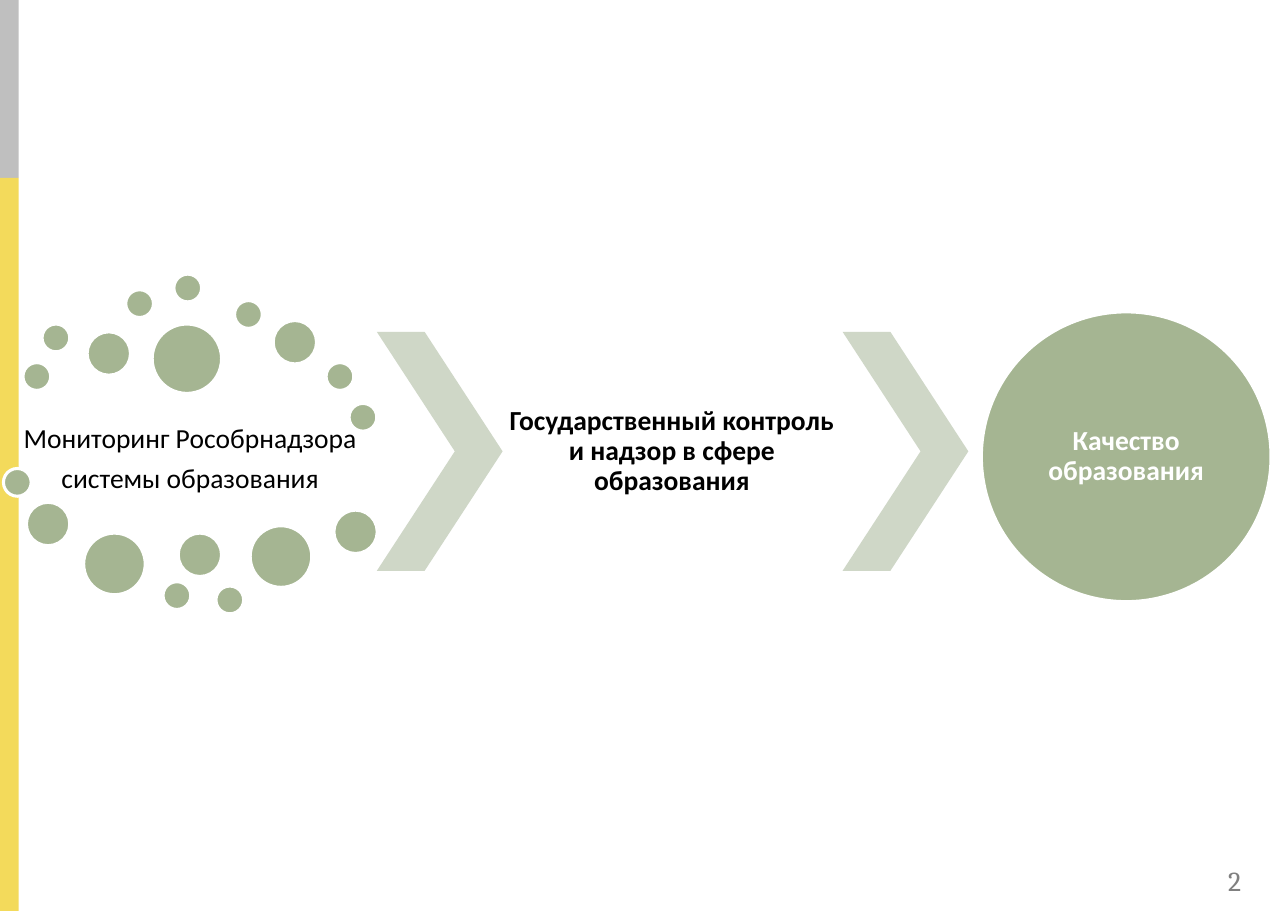
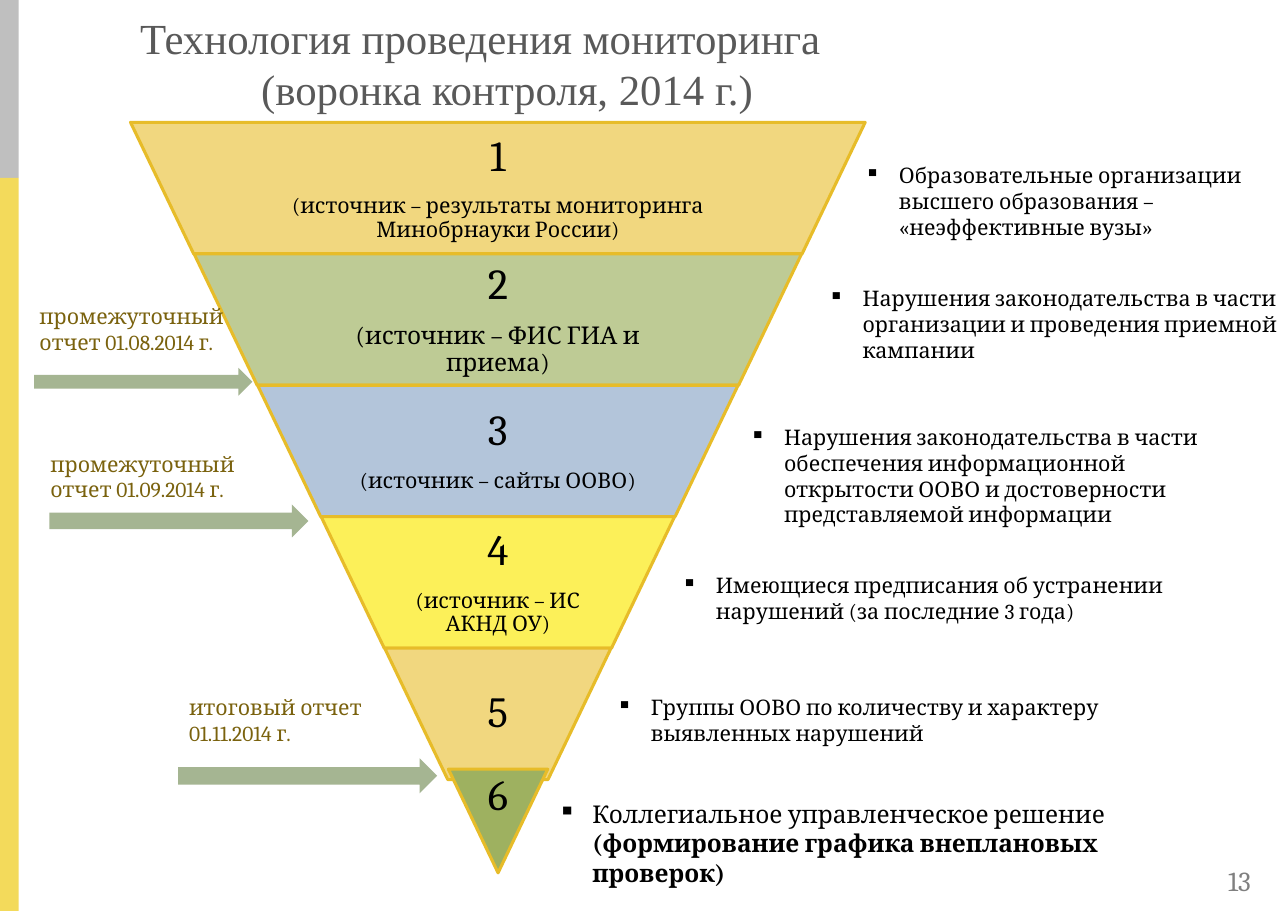
from dataclasses import dataclass

from lxml import etree
from pptx import Presentation
from pptx.dml.color import RGBColor
from pptx.enum import shapes, text
from pptx.oxml import ns
from pptx.util import Cm, Pt

KIND = shapes.MSO_SHAPE
LEFT, CENTER = text.PP_ALIGN.LEFT, text.PP_ALIGN.CENTER
TOP, MIDDLE = text.MSO_ANCHOR.TOP, text.MSO_ANCHOR.MIDDLE


@dataclass(frozen=True)
class Theme:
    white: str = "FFFFFF"
    black: str = "000000"
    gray: str = "BFBFBF"
    yellow: str = "F3DA5B"
    green: str = "A5B592"
    chevron: str = "CFD7C7"
    edge: str = "E7BC29"
    title: str = "595959"
    number: str = "808080"
    report: str = "7A620E"
    levels: tuple = ("F1D77F", "BECB95", "B3C5DA", "FCF059", "F1D77F")
    tip: str = "9EB160"
    body_font: str = "Cambria"
    diagram_font: str = "Calibri"
    title_font: str = "Times New Roman"
    large: int = 28
    medium: int = 18
    normal: int = 16
    small: int = 14


THEME = Theme()


class Builder:
    """Holds the deck, its theme and the page being drawn."""

    def __init__(self, theme):
        self.theme = theme
        self.deck = Presentation()
        self.deck.slide_width, self.deck.slide_height = Cm(29.7), Cm(21)
        self.page = None

    def start_page(self, number, title=None):
        """Add a page with side bands, a page number and perhaps a title."""
        theme = self.theme
        layout = self.deck.slide_layouts[5 if title else 6]
        self.page = self.deck.slides.add_slide(layout)
        self.shape(KIND.RECTANGLE, (0, 0, 0.43, 4.1), theme.gray)
        self.shape(KIND.RECTANGLE, (0, 4.1, 0.43, 16.9), theme.yellow)
        self.label((28.07, 19.79, 1.47, 1.02), [[(str(number), {})]],
                   size=theme.medium, color=theme.number)
        if title:
            box = self.page.shapes.title
            place = zip(("left", "top", "width", "height"), (2.95, 0.58, 17.48, 1.75))
            for name, value in place:
                setattr(box, name, Cm(value))
            self.set_text(box.text_frame, [[(line, {})] for line in title],
                          font=theme.title_font, size=theme.large, color=theme.title,
                          anchor=MIDDLE, insets=(0.28, 0.15, 0.28, 0.15))
            box.text_frame.paragraphs[1].alignment = CENTER

    def shape(self, kind, place, fill, line=None, adjust=None, turn=0):
        shape = self.page.shapes.add_shape(kind, *map(Cm, place))
        shape.shadow.inherit = False
        shape.rotation = turn
        shape.fill.solid()
        shape.fill.fore_color.rgb = RGBColor.from_string(fill)
        if line:
            shape.line.color.rgb = RGBColor.from_string(line)
            shape.line.width = Pt(2)
        else:
            shape.line.fill.background()
        if adjust is not None:
            shape.adjustments[0] = adjust
        return shape

    def label(self, place, paragraphs, **style):
        box = self.page.shapes.add_textbox(*map(Cm, place))
        self.set_text(box.text_frame, paragraphs, **style)

    def diagram_label(self, place, paragraphs, inset=0.1, **style):
        self.label(place, paragraphs, align=CENTER, spaced=True,
                   insets=(inset,) * 4, **{"anchor": MIDDLE, **style})

    def set_text(self, frame, paragraphs, font=None, size=18, color=None, bold=False,
                 align=LEFT, anchor=TOP, insets=(0.25, 0.13, 0.25, 0.13),
                 spaced=False, bullet=None):
        """Fill a frame; each paragraph is a list of (text, font values)."""
        sides = ("margin_left", "margin_top", "margin_right", "margin_bottom")
        values = {"word_wrap": True, "auto_size": text.MSO_AUTO_SIZE.NONE,
                  "vertical_anchor": anchor, **dict(zip(sides, map(Cm, insets)))}
        for name, value in values.items():
            setattr(frame, name, value)
        for index, spans in enumerate(paragraphs):
            para = frame.add_paragraph() if index else frame.paragraphs[0]
            para.alignment = align
            if bullet:
                self.add_bullet(para, bullet)
            for words, changes in spans:
                span = para.add_run()
                span.text = words
                look = {"name": font or self.theme.body_font, "size": size,
                        "bold": bold, **changes}
                points = look["size"]
                look["size"] = Pt(points)
                for name, value in look.items():
                    setattr(span.font, name, value)
                span.font.color.rgb = RGBColor.from_string(color or self.theme.black)
            if spaced:
                para.line_spacing = 0.9
                para.space_after = Pt(0.35 * points)

    @staticmethod
    def add_bullet(para, mark):
        properties = para._p.get_or_add_pPr()
        properties.set("marL", str(Cm(0.79)))
        properties.set("indent", str(Cm(-0.79)))
        etree.SubElement(properties, ns.qn("a:buChar")).set("char", mark)


def build_process(build):
    theme = build.theme
    build.start_page(2)
    build.diagram_label((0.46, 9.3, 7.85, 2.59),
                        [[("Мониторинг Рособрнадзора", {})],
                         [("системы образования", {})]],
                        inset=0.08, font=theme.diagram_font, size=theme.medium)
    dots = {
        0.64: ((0.53, 8.36), (0.97, 7.47), (2.9, 6.68), (4.01, 6.32), (5.41, 6.93),
               (7.52, 8.36), (8.05, 9.3), (0.08, 10.8), (3.76, 13.41), (4.98, 13.51)),
        1: ((2.01, 7.65), (6.3, 7.39), (0.61, 11.58), (4.11, 12.29), (7.7, 11.76)),
        1.42: ((1.93, 12.29), (5.77, 12.12)),
        1.6: ((3.51, 7.47),),
    }
    for diameter, corners in dots.items():
        for left, top in corners:
            build.shape(KIND.OVAL, (left, top, diameter, diameter),
                        theme.green, theme.white)
    for left in (8.69, 19.43):
        build.shape(KIND.CHEVRON, (left, 7.65, 2.9, 5.51), theme.chevron, adjust=0.62)
    build.diagram_label((11.56, 7.65, 7.87, 5.51),
                        [[("Государственный контроль и надзор в сфере образования", {})]],
                        inset=0.08, font=theme.diagram_font, size=theme.medium, bold=True)
    goal = build.shape(KIND.OVAL, (22.63, 7.19, 6.68, 6.68), theme.green, theme.white)
    build.set_text(goal.text_frame, [[("Качество образования", {})]],
                   font=theme.diagram_font, size=theme.medium, color=theme.white,
                   bold=True, align=CENTER, anchor=MIDDLE, insets=(0,) * 4, spaced=True)


def build_funnel(build):
    theme = build.theme
    build.start_page(13, ("Технология проведения мониторинга",
                          "(воронка контроля, 2014 г.)"))
    sources = (
        ("(источник – результаты мониторинга Минобрнауки России)", theme.small),
        ("(источник – ФИС ГИА и приема)", theme.normal),
        ("(источник – сайты ООВО)", theme.small),
        ("(источник – ИС АКНД ОУ)", theme.small),
        None,
    )
    middle, height = 11.48, 3.03
    for index, (fill, source) in enumerate(zip(theme.levels, sources)):
        width, top = 16.94 - 2.93 * index, 2.82 + height * index
        build.shape(KIND.TRAPEZOID, (middle - width / 2, top, width, height),
                    fill, theme.edge, adjust=0.48, turn=180)
        paragraphs = [[(str(index + 1), {})]]
        if source:
            words, size = source
            paragraphs.append([(words, {"size": size})])
        inner = 0.65 * width
        build.diagram_label((middle - inner / 2, top, inner, height),
                            paragraphs, size=theme.large)
    tip = (10.34, 17.73, 2.29, 2.39)
    build.shape(KIND.TRAPEZOID, tip, theme.tip, theme.edge, adjust=0.5, turn=180)
    build.diagram_label(tip, [[("6", {})]], size=theme.large, anchor=TOP)

    notes = (
        ((19.69, 3.61, 9.4, 2.06),
         "Образовательные организации высшего образования – «неэффективные вузы»"),
        ((18.85, 6.45, 10.85, 2.06),
         "Нарушения законодательства в части организации и проведения приемной кампании"),
        ((17.04, 9.65, 11.73, 2.64),
         "Нарушения законодательства в части обеспечения информационной "
         "открытости ООВО и достоверности представляемой информации"),
        ((15.47, 13.06, 11.73, 1.45),
         "Имеющиеся предписания об устранении нарушений (за последние 3 года)"),
        ((13.97, 15.88, 12.67, 1.45),
         "Группы ООВО по количеству и характеру выявленных нарушений"),
    )
    note_style = {"bullet": "▪", "insets": (0.25, 0.13, 0, 0.13)}
    for place, words in notes:
        build.label(place, [[(words, {})]], size=theme.small, **note_style)
    build.label((12.62, 18.29, 15.21, 2.31),
                [[("Коллегиальное управленческое решение ", {}),
                  ("(формирование графика внеплановых проверок)", {"bold": True})]],
                size=theme.normal, **note_style)

    reports = (
        ((0.79, 8.48, 5.03, 0.64), (0.66, 6.86, 4.8, 1.45),
         "промежуточный отчет 01.08.2014 г."),
        ((1.14, 11.63, 5.97, 0.76), (0.91, 10.26, 5.16, 1.45),
         "промежуточный отчет 01.09.2014 г."),
        ((4.11, 17.48, 5.97, 0.81), (4.11, 15.88, 5.16, 1.45),
         "итоговый отчет 01.11.2014 г."),
    )
    for arrow, place, words in reports:
        build.shape(KIND.RIGHT_ARROW, arrow, theme.green)
        build.label(place, [[(words, {})]], size=theme.small, color=theme.report)


def main():
    build = Builder(THEME)
    build_process(build)
    build_funnel(build)
    build.deck.save("out.pptx")


if __name__ == "__main__":
    main()
